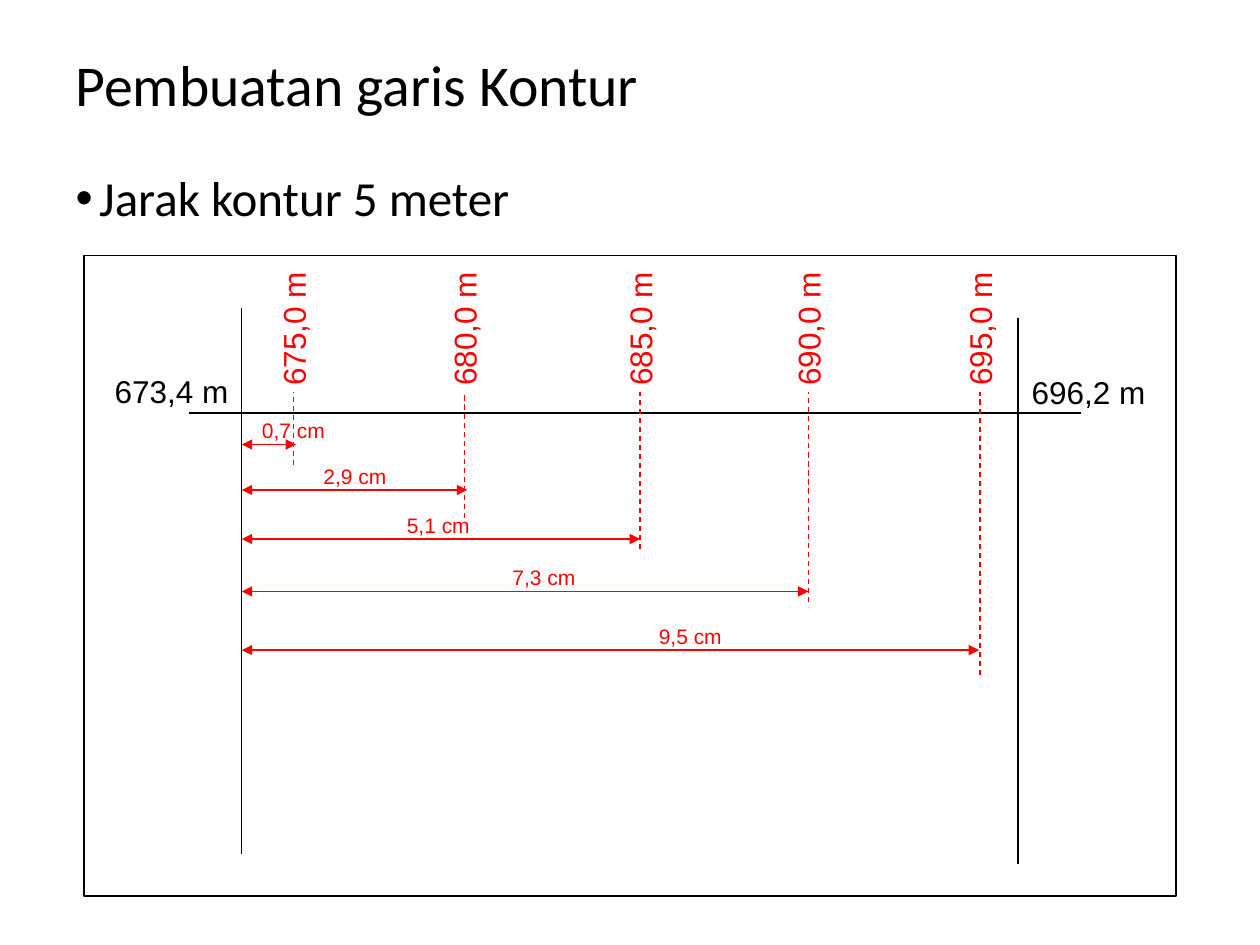
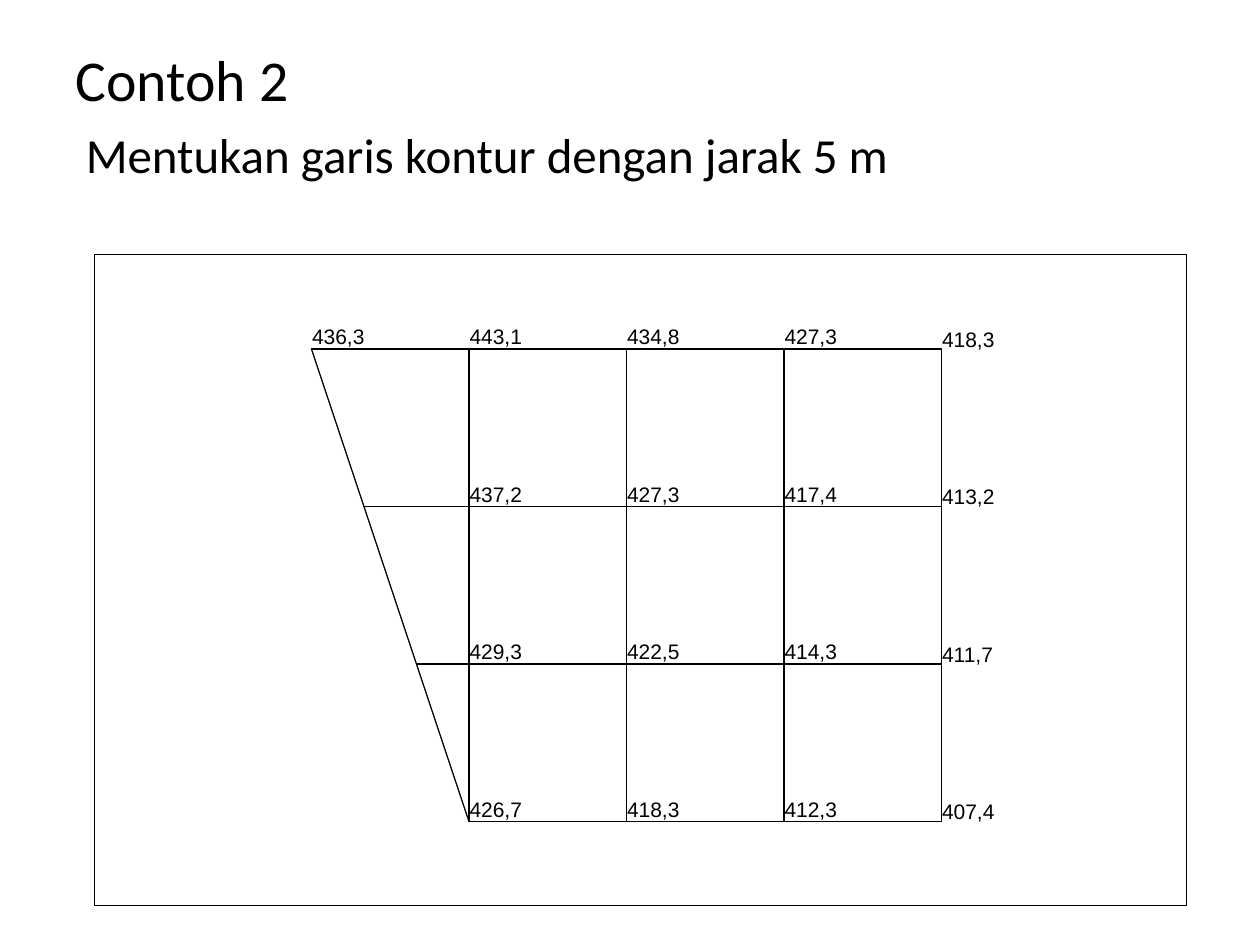
import collections

import lxml.etree
import pptx
import pptx.dml.color
import pptx.enum.dml
import pptx.enum.shapes
import pptx.enum.text
import pptx.oxml.ns
import pptx.util

Pt = pptx.util.Pt
qn = pptx.oxml.ns.qn
BLACK = pptx.dml.color.RGBColor(0x00, 0x00, 0x00)
RED = pptx.dml.color.RGBColor(0xFF, 0x00, 0x00)

Contour = collections.namedtuple(
    "Contour", "level distance x arrow_end arrow_y dash_bottom label_left")
CONTOURS = [
    Contour("675,0 m", "0,7 cm", 167.8, 169.2, 254, 265.7, 142.6),
    Contour("680,0 m", "2,9 cm", 265.5, 267, 280, 296, 177.8),
    Contour("685,0 m", "5,1 cm", 365.8, 365.8, 308, 314, 225.4),
    Contour("690,0 m", "7,3 cm", 462, 462, 338, 344, 285.8),
    Contour("695,0 m", "9,5 cm", 560, 559.5, 371.5, 386, 369.4),
]
HEIGHTS = [
    ["436,3", "443,1", "434,8", "427,3", "418,3"],
    ["437,2", "427,3", "417,4", "413,2"],
    ["429,3", "422,5", "414,3", "411,7"],
    ["426,7", "418,3", "412,3", "407,4"],
]


class Deck:
    heading_font = "Calibri"
    label_font = "Arial"
    line_width = Pt(0.75)

    def __init__(self):
        self.presentation = pptx.Presentation()
        self.presentation.slide_width = Pt(720)
        self.presentation.slide_height = Pt(540)
        self.slide = None

    def add_slide(self):
        layout = self.presentation.slide_layouts[1]
        self.slide = self.presentation.slides.add_slide(layout)

    def add_text_run(self, paragraph, text, font, size, color):
        run = paragraph.add_run()
        run.text = text
        run.font.name = font
        run.font.size = Pt(size)
        run.font.color.rgb = color

    def fill_placeholder(self, shape, text, size, box):
        """Move a placeholder to box and give it one left-aligned paragraph."""
        shape.left, shape.top, shape.width, shape.height = map(Pt, box)
        shape.text_frame.auto_size = pptx.enum.text.MSO_AUTO_SIZE.NONE
        paragraph = shape.text_frame.paragraphs[0]
        paragraph.alignment = pptx.enum.text.PP_ALIGN.LEFT
        paragraph.line_spacing = 0.9
        paragraph.space_before = Pt(0)
        self.add_text_run(paragraph, text, self.heading_font, size, BLACK)
        return paragraph

    def title(self, text, height):
        shape = self.slide.shapes.title
        self.fill_placeholder(shape, text, 33, (36, 21.6, 648, height))
        shape.text_frame.vertical_anchor = pptx.enum.text.MSO_ANCHOR.MIDDLE

    def body(self, text, box, bullet=False):
        shape = self.slide.placeholders[1]
        properties = self.fill_placeholder(shape, text, 28, box)._p.get_or_add_pPr()
        indent = Pt(13.5) if bullet else 0
        properties.set("marL", str(indent))
        properties.set("indent", str(-indent))
        if bullet:
            lxml.etree.SubElement(properties, qn("a:buFont"), typeface="Arial")
            lxml.etree.SubElement(properties, qn("a:buChar"), char="•")
        else:
            lxml.etree.SubElement(properties, qn("a:buNone"))

    def rectangle(self, left, top, width, height):
        shape = self.slide.shapes.add_shape(
            pptx.enum.shapes.MSO_SHAPE.RECTANGLE,
            Pt(left), Pt(top), Pt(width), Pt(height))
        shape.shadow.inherit = False
        shape.fill.background()
        shape.line.color.rgb = BLACK
        shape.line.width = self.line_width

    def line(self, x1, y1, x2, y2, color=BLACK, dashed=False, arrows=False):
        connector = self.slide.shapes.add_connector(
            pptx.enum.shapes.MSO_CONNECTOR.STRAIGHT,
            Pt(x1), Pt(y1), Pt(x2), Pt(y2))
        connector.line.color.rgb = color
        connector.line.width = self.line_width
        if dashed:
            connector.line.dash_style = pptx.enum.dml.MSO_LINE.DASH
        properties = connector._element.spPr
        if arrows:
            outline = properties.find(qn("a:ln"))
            for end in ("a:headEnd", "a:tailEnd"):
                lxml.etree.SubElement(outline, qn(end), type="triangle")
        lxml.etree.SubElement(properties, qn("a:effectLst"))

    def label(self, text, left, top, width, size=12, color=BLACK, rotation=0):
        height = 28.8 if size == 18 else 21.6
        shape = self.slide.shapes.add_textbox(
            Pt(left), Pt(top), Pt(width), Pt(height))
        shape.rotation = rotation
        frame = shape.text_frame
        frame.word_wrap = False
        frame.auto_size = pptx.enum.text.MSO_AUTO_SIZE.SHAPE_TO_FIT_TEXT
        self.add_text_run(frame.paragraphs[0], text, self.label_font, size, color)


def add_contour_slide(deck):
    left_point, right_point, baseline = 138.2, 581.8, 236
    deck.add_slide()
    deck.title("Pembuatan garis Kontur", 57)
    deck.body("Jarak kontur 5 meter", (36, 95.8, 648, 422), bullet=True)
    deck.rectangle(48, 146, 624, 366)
    deck.label("673,4 m", 58.4, 209, 79.2, size=18)
    deck.label("696,2 m", 582.4, 209.5, 79.2, size=18)
    deck.line(108, baseline, 618, baseline)
    deck.line(left_point, 176, left_point, 488)
    deck.line(right_point, 182, right_point, 494)
    for contour in CONTOURS:
        deck.line(left_point, contour.arrow_y, contour.arrow_end, contour.arrow_y,
                  color=RED, arrows=True)
        deck.line(contour.x, contour.dash_bottom, contour.x, 224,
                  color=RED, dashed=True)
        deck.label(contour.distance, contour.label_left, contour.arrow_y - 18.7,
                   50.4, color=RED)
        deck.label(contour.level, contour.x - 39.8, 173.4, 79.2,
                   size=18, color=RED, rotation=270)


def add_grid_slide(deck):
    left, top, step, slant = 178, 199.5, 90, 30
    deck.add_slide()
    deck.title("Contoh 2", 52)
    deck.body("Mentukan garis kontur dengan jarak 5 m", (41.8, 71.3, 648, 39))
    deck.rectangle(54, 145.5, 624, 372)
    for row in range(3):
        y = top + row * step
        deck.line(left + row * slant, y, left + step, y)
        for column in range(1, 4):
            deck.rectangle(left + column * step, y, step, step)
    deck.line(left + step, top + 3 * step, left, top)
    for row, heights in enumerate(HEIGHTS):
        for column, height in enumerate(heights, start=5 - len(heights)):
            drop = 1.4 if column == 4 else 0
            deck.label(height, left + column * step - 6.8,
                       top + row * step - 18 + drop, 44.6)


def main():
    deck = Deck()
    add_contour_slide(deck)
    add_grid_slide(deck)
    deck.presentation.save("out.pptx")


if __name__ == "__main__":
    main()
